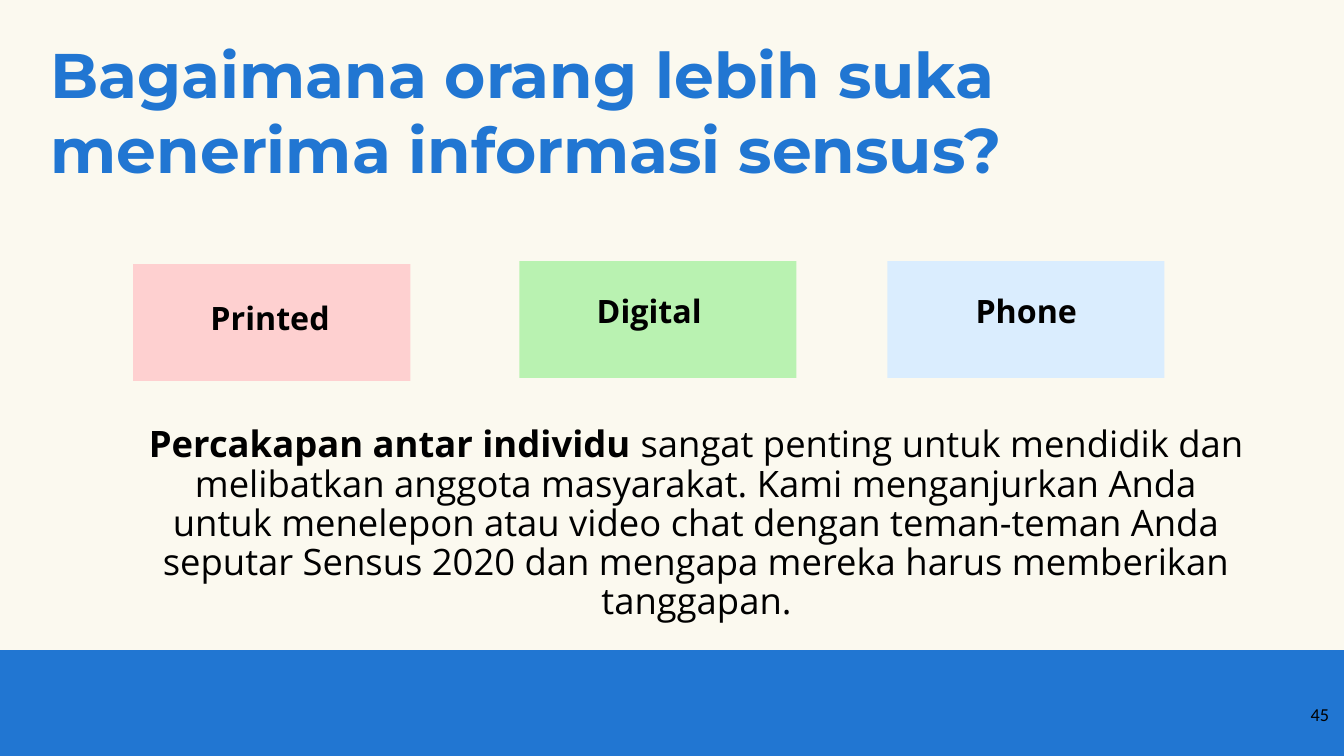
import pptx
import pptx.util
import pptx.dml.color
import pptx.enum.shapes
import pptx.enum.text

Inches = pptx.util.Inches
ALIGN = pptx.enum.text.PP_ALIGN

COLORS = {
    "cream": "FBF9EF", "blue": "2176D2", "black": "000000",
    "pink": "FED0D0", "green": "B9F2B1", "sky": "DAEDFE",
}
TITLE = "Bagaimana orang lebih suka menerima informasi sensus?"
# label, fill, card left, card top, label left, label top
CHANNELS = [
    ("Printed", "pink", 1.32, 2.62, 0.9, 2.95),
    ("Digital", "green", 5.15, 2.59, 4.66, 2.88),
    ("Phone", "sky", 8.8, 2.59, 8.4, 2.88),
]
CARD_SIZE = (2.75, 1.16)
LABEL_SIZE = (3.56, 0.64)
# text, bold
MESSAGE = [
    ("Percakapan antar individu", True),
    (" sangat penting untuk mendidik dan melibatkan anggota masyarakat. "
     "Kami menganjurkan Anda untuk menelepon atau video chat dengan "
     "teman-teman Anda seputar Sensus 2020 dan mengapa mereka harus "
     "memberikan tanggapan.", False),
]
PAGE_NUMBER = "45"


def rgb(name):
    return pptx.dml.color.RGBColor.from_string(COLORS[name])


def add_block(s, left, top, width, height, color):
    sp = s.shapes.add_shape(
        pptx.enum.shapes.MSO_SHAPE.RECTANGLE,
        Inches(left), Inches(top), Inches(width), Inches(height))
    sp.shadow.inherit = False
    sp.fill.solid()
    sp.fill.fore_color.rgb = rgb(color)
    sp.line.fill.background()


def write(sp, runs, font, size, color, align, spacing=1.0):
    """Fill a shape with one top-anchored paragraph of (text, bold) runs."""
    tf = sp.text_frame
    tf.word_wrap = True
    tf.auto_size = pptx.enum.text.MSO_AUTO_SIZE.NONE
    tf.vertical_anchor = pptx.enum.text.MSO_ANCHOR.TOP
    p = tf.paragraphs[0]
    p.alignment = align
    p.line_spacing = spacing
    for text, bold in runs:
        r = p.add_run()
        r.text = text
        r.font.name = font
        r.font.size = pptx.util.Pt(size)
        r.font.bold = bold
        r.font.color.rgb = rgb(color)


def add_text(s, left, top, width, height, *style):
    sp = s.shapes.add_textbox(
        Inches(left), Inches(top), Inches(width), Inches(height))
    write(sp, *style)


def main():
    prs = pptx.Presentation()
    prs.slide_width, prs.slide_height = Inches(13.33), Inches(7.5)
    s = prs.slides.add_slide(prs.slide_layouts[5])
    s.background.fill.solid()
    s.background.fill.fore_color.rgb = rgb("cream")

    add_block(s, 0, 6.45, 13.33, 1.05, "blue")

    title = s.shapes.title
    title.left, title.top = Inches(0.4), Inches(0.3)
    title.width, title.height = Inches(12.53), Inches(1.92)
    write(title, [(TITLE, True)], "Montserrat", 45, "blue", ALIGN.LEFT)

    for label, fill, card_left, card_top, left, top in CHANNELS:
        add_block(s, card_left, card_top, *CARD_SIZE, fill)
        add_text(s, left, top, *LABEL_SIZE,
                 [(label, True)], "Open Sans", 23, "black", ALIGN.CENTER, 0.9)

    add_text(s, 1.34, 4.18, 11.14, 2.12,
             MESSAGE, "Open Sans", 26, "black", ALIGN.CENTER, 0.9)
    add_text(s, 12.48, 6.93, 0.8, 0.57,
             [(PAGE_NUMBER, False)], "Calibri", 13, "black", ALIGN.RIGHT)

    prs.save("out.pptx")


if __name__ == "__main__":
    main()
